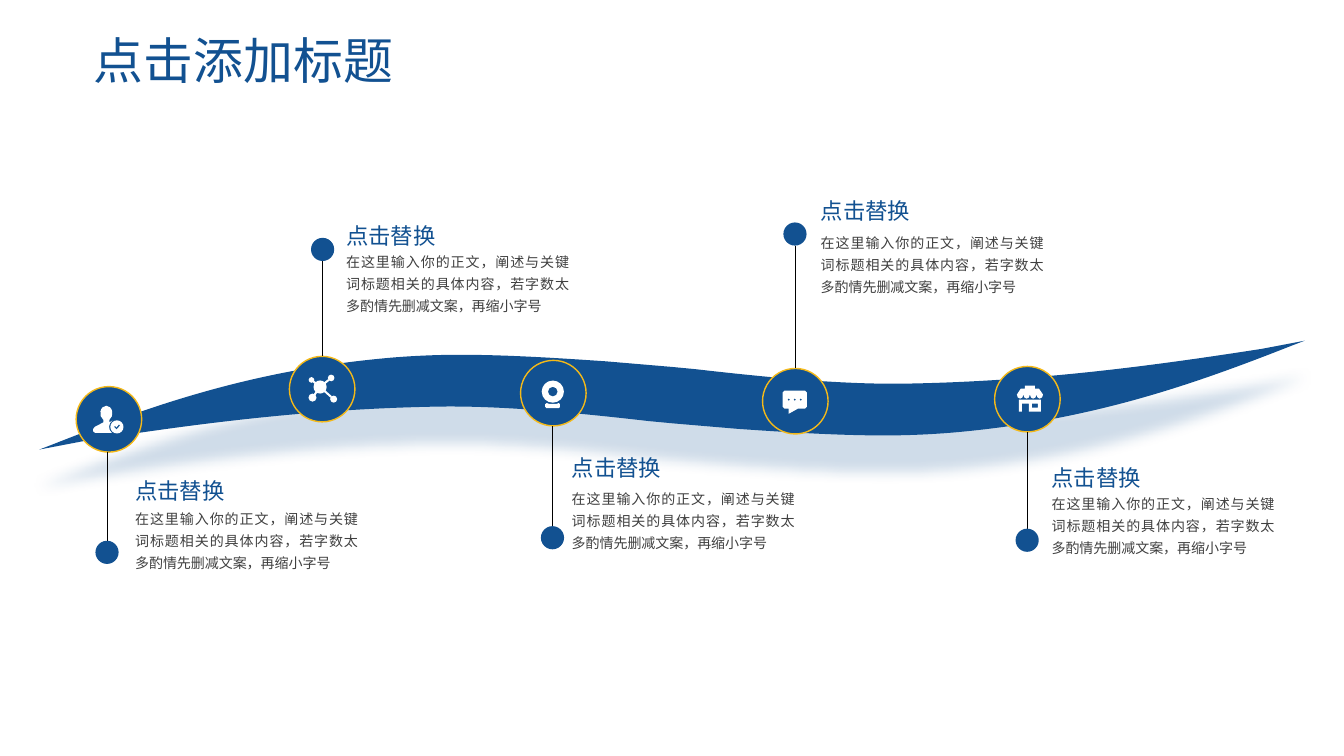
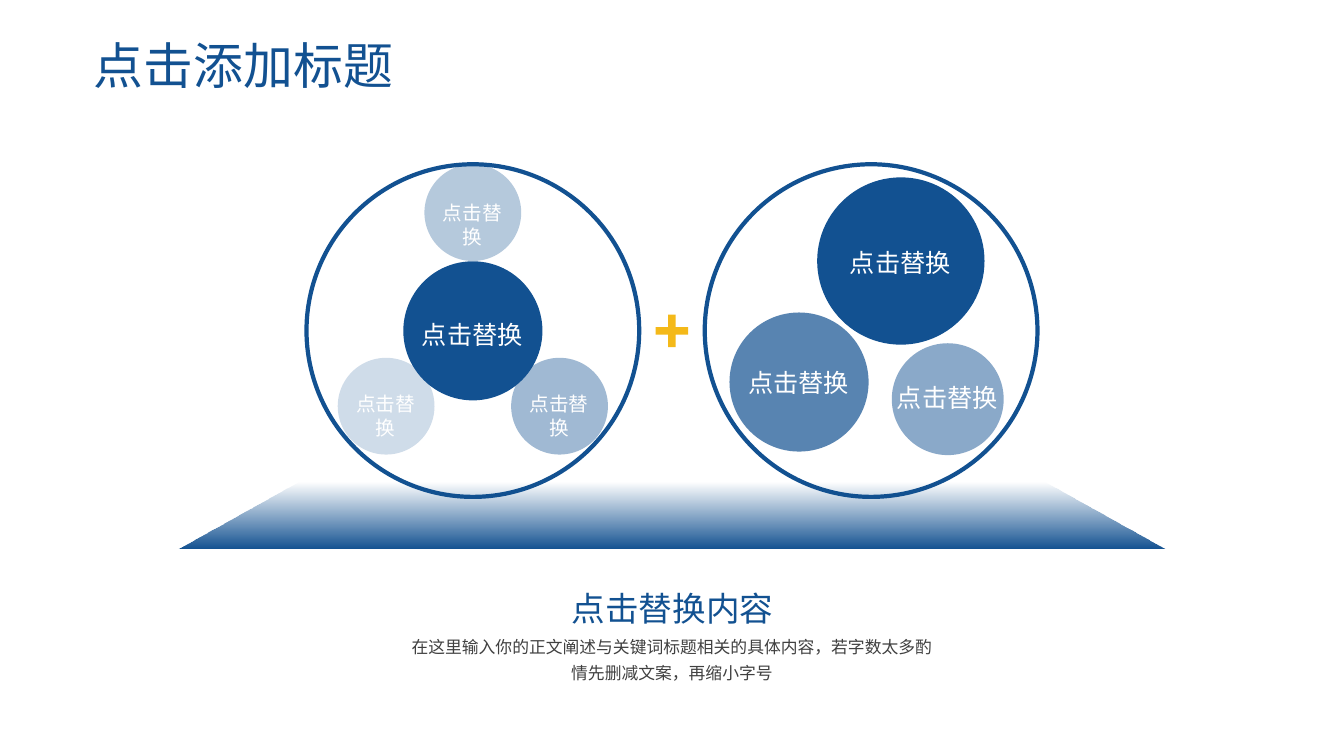
from dataclasses import dataclass
from math import ceil, cos, hypot, radians, sin, tan

from lxml import etree
from pptx import Presentation
from pptx import util as u
from pptx.dml.color import RGBColor
from pptx.enum import shapes as kinds, text as txt
from pptx.oxml.ns import qn

BLUE, GOLD, GREY = "125191", "F4B919", "404040"
WHITE, BLACK = "FFFFFF", "000000"
FONT = "Noto Sans CJK SC"
HEIGHT = u.Inches(7.5)
WIDTH = u.Inches(13.33)
CELL = HEIGHT / 75  # square grid: 75 rows, every length below is in cells

TITLE = "点击添加标题"
LABEL = "点击替换"
BODY = "在这里输入你的正文，阐述与关键词标题相关的具体内容，若字数太多酌情先删减文案，再缩小字号"
CLOSING = BODY.replace("，", "", 1)

Point = tuple[float, float]
Step = tuple[Point, ...]  # one point is a line, three are a curve
Outline = list[Step]


@dataclass
class Stop:
    """A round node on the wave, with its pin and its text."""
    node: Point
    dot: Point
    left: float
    head: float
    body: float
    icon: list[Outline]


@dataclass
class Bubble:
    x: float
    y: float
    size: float
    alpha: int
    top: float
    points: int = 18


# Shared drawing
def at(cells: float) -> u.Emu:
    return u.Emu(round(cells * CELL))


def paint(fill, colour: str) -> None:
    fill.solid()
    fill.fore_color.rgb = RGBColor.from_string(colour)


def fade(colour, percent: int) -> None:
    etree.SubElement(colour, qn("a:alpha"), val=str(percent * 1000))


def shape(slide, kind, x: float, y: float, w: float, h: float,
          fill: str = "", line: str = "", weight: float = 1):
    item = slide.shapes.add_shape(kind, at(x), at(y), at(w), at(h))
    item.shadow.inherit = False
    if fill:
        paint(item.fill, fill)
    else:
        item.fill.background()
    if line:
        paint(item.line.fill, line)
        item.line.width = u.Pt(weight)
    else:
        item.line.fill.background()
    return item


def circle(slide, x: float, y: float, size: float, **style):
    return shape(slide, kinds.MSO_SHAPE.OVAL, x - size / 2, y - size / 2,
                 size, size, **style)


def outline(slide, parts: list[Outline], fill: str, origin: Point = (0, 0)):
    def place(points) -> list:
        return [(at(origin[0] + x), at(origin[1] + y)) for x, y in points]

    pen = slide.shapes.build_freeform(*place(parts[0][0])[0])
    for part in parts:
        pen.move_to(*place(part[0])[0])
        pen.add_line_segments(place(p for step in part[1:] for p in step))
    item = pen.convert_to_shape()
    item.shadow.inherit = False
    paint(item.fill, fill)
    item.line.fill.background()

    # Merge each run of three points into one curve
    track = next(item._element.iter(qn("a:path")))
    lines = iter(list(track.iter(qn("a:lnTo"))))
    for part in parts:
        for step in part[1:]:
            first = last = next(lines)
            if len(step) == 3:
                first.tag = qn("a:cubicBezTo")
                for _ in range(2):
                    last = next(lines)
                    first.append(last[0])
                    track.remove(last)
        first.addnext(etree.Element(qn("a:close")))
    track.remove(track[0])  # the pen's own start, replaced by the first part
    return item


def style(para, points: float, colour: str, align, space: float = 1) -> None:
    para.alignment = align
    para.line_spacing = space
    para.font.size = u.Pt(points)
    para.font.name = FONT
    paint(para.font.fill, colour)
    props = para._p.pPr.find(qn("a:defRPr"))
    props.find(qn("a:latin")).addnext(
        etree.Element(qn("a:ea"), typeface=FONT))


def write(slide, words: str, x: float, y: float, w: float, h: float,
          points: float, colour: str, align=txt.PP_ALIGN.LEFT,
          space: float = 1, wrap: bool = True) -> None:
    frame = slide.shapes.add_textbox(at(x), at(y), at(w), at(h)).text_frame
    frame.margin_left = frame.margin_right = 0
    frame.margin_top = frame.margin_bottom = 0
    frame.word_wrap = wrap
    frame.auto_size = txt.MSO_AUTO_SIZE.SHAPE_TO_FIT_TEXT
    frame.text = words
    style(frame.paragraphs[0], points, colour, align, space)


def start(deck, top: float):
    slide = deck.slides.add_slide(deck.slide_layouts[5])
    title = slide.shapes.title
    title.left, title.top = at(8.3), at(top)
    title.width, title.height = at(115), at(5)
    frame = title.text_frame
    frame.text = TITLE
    frame.auto_size = txt.MSO_AUTO_SIZE.NONE
    frame.vertical_anchor = txt.MSO_ANCHOR.TOP
    style(frame.paragraphs[0], 35.6, BLUE, txt.PP_ALIGN.LEFT, 0.9)
    return slide


# Outlines
def poly(*points: Point) -> Outline:
    return [(p,) for p in points]


def arc(x: float, y: float, rx: float, ry: float = 0,
        first: float = 0, last: float = 360) -> Outline:
    ry = ry or rx
    count = ceil(abs(last - first) / 90)
    turn = radians(last - first) / count
    pull = 4 / 3 * tan(turn / 4)

    def spot(a: float, k: float = 0) -> Point:
        return (x + rx * (cos(a) - k * sin(a)),
                y + ry * (sin(a) + k * cos(a)))

    angles = [radians(first) + turn * i for i in range(count + 1)]
    return [(spot(angles[0]),)] + [
        (spot(a, pull), spot(b, -pull), spot(b))
        for a, b in zip(angles, angles[1:])]


def wave() -> Outline:
    """The lower edge, then the same edge turned half round."""
    edge = [((129.4, 33.8),), ((128.1, 34.3),),
            ((118.2, 38.2), (108, 41.8), (94.1, 42.95)),
            ((92.1, 43.1), (90, 43.2), (87.7, 43.2)),
            ((83.2, 43.2), (78.3, 42.9), (73.2, 42.55)),
            ((66.7, 42),), ((64.3, 41.77),),
            ((56.7, 40.9), (49.3, 40.2), (42.9, 40.35)),
            ((30.2, 40.6), (19, 42.1), (8.1, 43.8))]
    return edge + [tuple((133.3 - x, 78.4 - y) for x, y in step)
                   for step in edge]


# Icons, measured from the centre of their node
def person() -> list[Outline]:
    bust = [*arc(-0.25, -0.6, 0.6, 0.75, 120, 420), ((0.05, 0.3),),
            *arc(0.8, 0.75, 0.78, first=235, last=130),
            *poly((-1.35, 1.35), (-1.55, 1.2), (-1.55, 0.95), (-1.4, 0.75),
                  (-0.55, 0.3))]
    tick = poly((0.5, 0.75), (0.6, 0.65), (0.75, 0.8), (1, 0.5),
                (1.12, 0.6), (0.77, 1))
    return [bust, arc(0.8, 0.75, 0.65), tick]


def network() -> list[Outline]:
    x, y, hub = -0.2, -0.2, 0.65
    parts = [arc(x, y, hub)]
    for a, b, r in [(1.15, 1, 0.35), (-0.95, 0.85, 0.4),
                    (-1.05, -0.9, 0.28), (0.9, -1.1, 0.33)]:
        span = hypot(a - x, b - y)
        dx, dy = (a - x) / span, (b - y) / span
        corners = [(hub, 0.1), (span - r, 0.1), (span - r, -0.1), (hub, -0.1)]
        parts += [arc(a, b, r), poly(*((x + dx * far - dy * side,
                                        y + dy * far + dx * side)
                                       for far, side in corners))]
    return parts


def camera() -> list[Outline]:
    base = poly((-0.65, 0.98), (-0.4, 1.08), (0.3, 1.08), (0.55, 0.98),
                (0.65, 1.1), (0.65, 1.4), (0.55, 1.48), (-0.7, 1.48),
                (-0.8, 1.35), (-0.8, 1.1))
    return [arc(-0.05, -0.15, 1.1), arc(-0.05, -0.15, 0.48), base]


def chat() -> list[Outline]:
    bubble = poly((-1.05, -1.05), (0.95, -1.05), (1.15, -0.85), (1.15, 0.55),
                  (0.95, 0.75), (0.25, 0.75), (-0.65, 1.25), (-0.65, 0.75),
                  (-1.05, 0.75), (-1.25, 0.55), (-1.25, -0.85))
    return [bubble, *(arc(x, -0.15, 0.13) for x in (-0.65, -0.05, 0.55))]


def shop() -> list[Outline]:
    roof = poly((-0.25, -1.35), (0.75, -1.35), (0.75, -1.05), (1.15, -1.05))
    for i in range(4):
        roof += arc(1.23 - 0.65 * i, -0.45, 0.32, 0.4, 0, 180)
    roof += poly((-0.65, -1.05), (-0.25, -1.05))
    walls = poly((-0.85, 0.05), (1.35, 0.05), (1.35, 1.25), (0.15, 1.25),
                 (0.15, 0.45), (-0.55, 0.45), (-0.55, 1.25), (-0.85, 1.25))
    pane = poly((0.45, 0.45), (1.05, 0.45), (1.05, 0.85), (0.45, 0.85))
    return [roof, walls, pane]


STOPS = [
    Stop((10.8, 41.6), (10.62, 54.8), 13.4, 47.3, 50.15, person()),
    Stop((31.95, 38.6), (32, 24.75), 34.33, 22, 24.7, network()),
    Stop((54.88, 39), (54.8, 53.35), 56.7, 45.08, 48.17, camera()),
    Stop((78.88, 39.8), (78.85, 23.22), 81.4, 19.6, 22.77, chat()),
    Stop((101.9, 39.6), (101.88, 53.6), 104.3, 46, 48.7, shop()),
]
BUBBLES = [
    Bubble(46.9, 32.82, 13.8, 100, 31.67),
    Bubble(46.9, 21.1, 9.6, 31, 19.95, 14),
    Bubble(38.3, 40.3, 9.6, 20, 38.9, 14),
    Bubble(55.5, 40.3, 9.6, 40, 38.9, 14),
    Bubble(79.25, 37.9, 13.8, 70, 36.4),
    Bubble(89.35, 25.9, 16.6, 100, 24.5),
    Bubble(94, 39.6, 11.1, 49, 37.9),
]


# Slide 1: five stops along a wave
def pin(slide, stop: Stop) -> None:
    x, end = stop.dot
    side = 1 if end > stop.node[1] else -1
    line = slide.shapes.add_connector(
        kinds.MSO_CONNECTOR.STRAIGHT, at(x), at(stop.node[1] + 3.25 * side),
        at(x), at(end - 1.15 * side))
    paint(line.line.fill, BLACK)
    line.line.width = u.Pt(0.5)
    etree.SubElement(line._element.spPr, qn("a:effectLst"))
    circle(slide, x, end, 2.3, fill=BLUE)


def timeline(deck) -> None:
    slide = start(deck, 3.1)
    band = outline(slide, [wave()], BLUE)
    glow = etree.SubElement(
        band._element.spPr.find(qn("a:effectLst")), qn("a:outerShdw"),
        blurRad=str(u.Pt(9)), dist=str(u.Pt(25)), dir="5400000",
        algn="t", rotWithShape="0")
    fade(etree.SubElement(glow, qn("a:srgbClr"), val=BLUE), 20)
    for stop in STOPS:
        circle(slide, *stop.node, 6.5, fill=BLUE, line=GOLD)
        pin(slide, stop)
        outline(slide, stop.icon, WHITE, stop.node)
        write(slide, LABEL, stop.left, stop.head, 14.1, 2.7, 16, BLUE)
        write(slide, BODY, stop.left, stop.body, 22.1, 6.4, 10, GREY,
              txt.PP_ALIGN.JUSTIFY, 1.3)


# Slide 2: two rings of bubbles on a stage
def rings(deck) -> None:
    slide = start(deck, 3.6)
    centre = txt.PP_ALIGN.CENTER
    for x in (46.9, 86.4):
        circle(slide, x, 32.8, 33, line=BLUE, weight=3)
    for item in BUBBLES:
        ball = circle(slide, item.x, item.y, item.size, fill=BLUE)
        if item.alpha < 100:
            fade(ball._element.spPr.find(qn("a:solidFill"))[0], item.alpha)
    for item in BUBBLES:
        small = item.points < 18
        wide = 7.2 if small else 10
        write(slide, LABEL, item.x - 0.05 - wide / 2, item.top, wide, 3,
              item.points, WHITE, centre, wrap=small)
    plus = shape(slide, kinds.MSO_SHAPE.MATH_PLUS, 64.45, 30.63, 4.4, 4.4,
                 fill=GOLD)
    plus.adjustments[0] = 0.17

    write(slide, "点击替换内容", 56.7, 58.3, 20, 4, 24, BLUE, centre,
          wrap=False)
    write(slide, CLOSING, 40.7, 62.57, 51.9, 5, 12, GREY, centre, 1.3)

    stage = shape(slide, kinds.MSO_SHAPE.TRAPEZOID, 17.7, 47.88, 97.9, 6.5)
    stage.adjustments[0] = 1.83
    stage.fill.gradient()
    stage.fill.gradient_angle = 270
    for mark in stage.fill.gradient_stops:
        mark.color.rgb = RGBColor.from_string(BLUE)
    fade(next(stage._element.spPr.iter(qn("a:srgbClr"))), 0)


def main() -> None:
    deck = Presentation()
    deck.slide_width, deck.slide_height = WIDTH, HEIGHT
    timeline(deck)
    rings(deck)
    deck.save("out.pptx")


if __name__ == "__main__":
    main()
